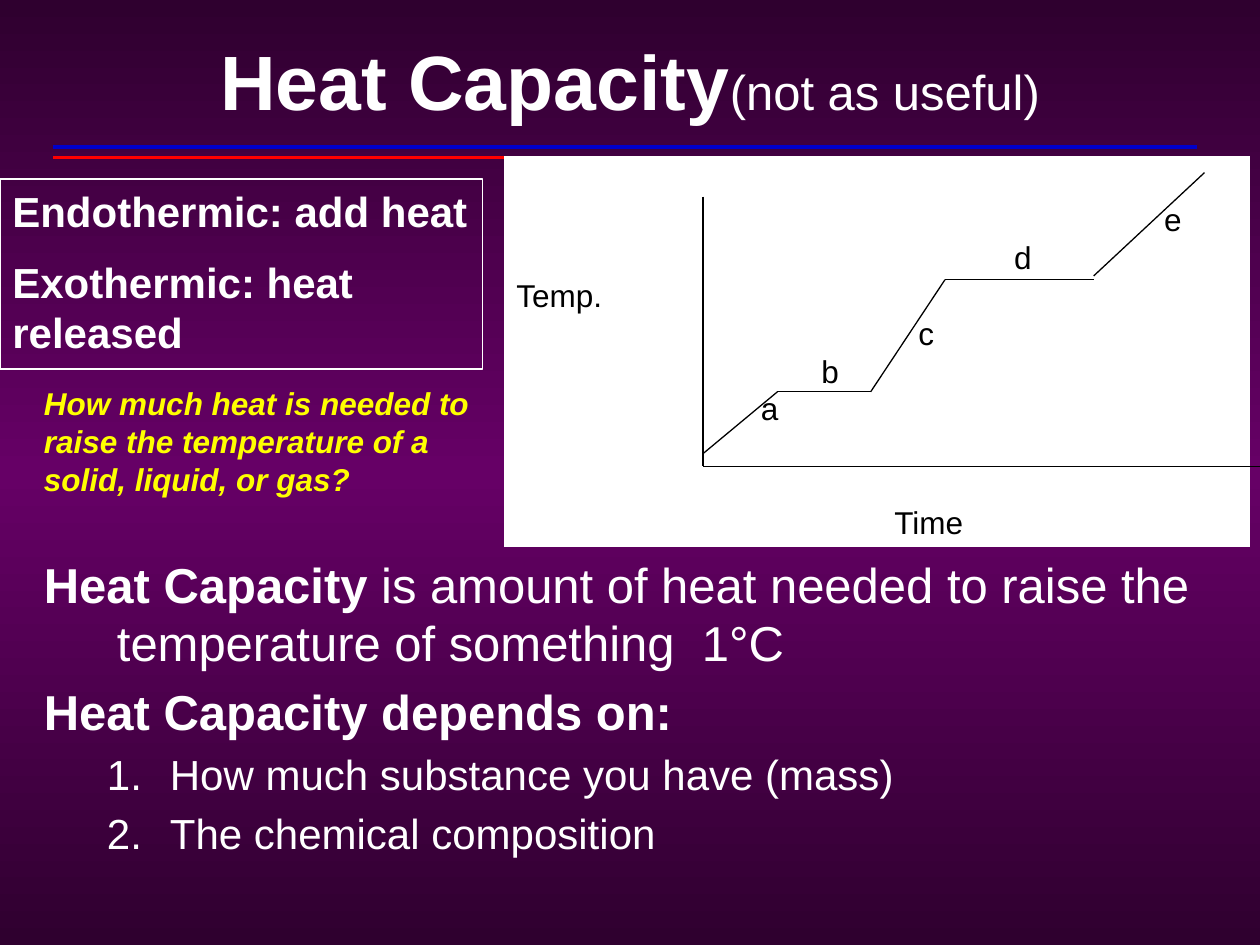
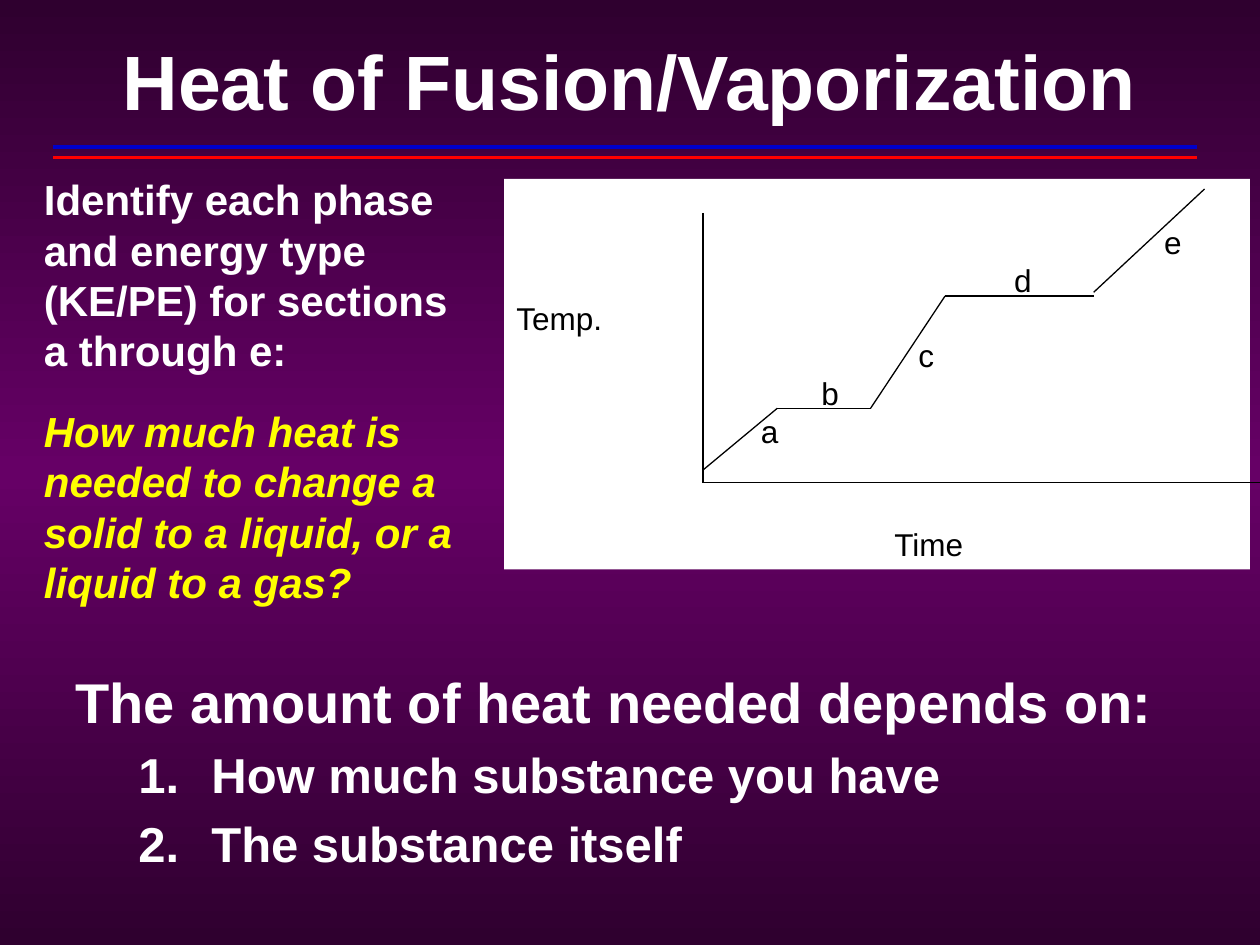
"""Build two slides about heat capacity and the heat of phase changes."""
from copy import deepcopy
from dataclasses import dataclass

from lxml.etree import SubElement
from pptx import Presentation
from pptx.dml.color import RGBColor
from pptx.enum.shapes import MSO_CONNECTOR, MSO_SHAPE
from pptx.enum.text import MSO_ANCHOR, MSO_AUTO_SIZE, PP_ALIGN
from pptx.oxml.ns import qn
from pptx.util import Inches, Pt


@dataclass(frozen=True)
class Theme:
    font: str = "Arial"
    edge: str = "2F002F"
    middle: str = "660066"
    text: str = "FFFFFF"
    question: str = "FFFF00"
    panel: str = "FFFFFF"
    ink: str = "000000"
    red_rule: str = "FF0000"
    blue_rule: str = "0000CC"
    title_size: int = 44
    heading_size: int = 32
    body_size: int = 28
    note_size: int = 24
    label_size: int = 18
    line_height: float = 1.2
    rule_width: float = 2.25
    thin_width: float = 0.75


@dataclass(frozen=True)
class Line:
    pieces: tuple
    size: int
    color: str
    gap: float = 0
    indent: float = 0
    hanging: float = 0
    italic: bool = False
    numbered: bool = False


THEME = Theme()
PANEL_LEFT, PANEL_WIDTH, PANEL_HEIGHT = 4, 5.92, 3.1
AXIS_LEFT, AXIS_RIGHT, AXIS_HEIGHT = 5.58, 10, 2.14
HEATING_CURVE = [(5.58, 2.04), (6.17, 1.55), (6.91, 1.55), (7.5, 0.66), (8.68, 0.66)]
GAS_SECTION = [(8.68, 0.63), (9.56, -0.19)]
CURVE_LABELS = [("e", 5.14), ("d", 3.95), ("Temp.", 0), ("c", 3.19),
                ("b", 2.42), ("a", 1.94), ("Time", 3)]


def rgb(color):
    return RGBColor.from_string(color)


def plain(text, size, bold=True, color=THEME.text, **options):
    return Line(((text, bold),), size, color, **options)


def body_line(text, size, bold=True, **options):
    return plain(text, size, bold, gap=0.2 * size, **options)


def numbered(texts, size, bold, indent, hanging):
    return [body_line(text, size, bold, indent=indent, hanging=hanging, numbered=True)
            for text in texts]


class SlideBuilder:
    def __init__(self, presentation, theme):
        self.presentation = presentation
        self.theme = theme
        self.slide = None

    def paint_background(self):
        master = self.presentation.slide_master
        fill = master.background.fill
        fill.gradient()
        fill.gradient_angle = 90
        stop_list = master.element.find(".//" + qn("a:gsLst"))
        stop_list.append(deepcopy(stop_list[0]))
        colors = (self.theme.edge, self.theme.middle, self.theme.edge)
        for index, (stop, color) in enumerate(zip(fill.gradient_stops, colors)):
            stop.position = index / 2
            stop.color.rgb = rgb(color)

    def start(self, title, remark=""):
        layout = self.presentation.slide_layouts.get_by_name("Title Only")
        self.slide = self.presentation.slides.add_slide(layout)
        self.connect((0.42, 1.25), (9.5, 1.25), self.theme.red_rule, self.theme.rule_width)
        self.connect((0.42, 1.17), (9.5, 1.17), self.theme.blue_rule, self.theme.rule_width)
        shape = self.slide.shapes.title
        shape.left, shape.top = Inches(0.5), Inches(0.17)
        shape.width, shape.height = Inches(9), Inches(0.92)
        text_frame = shape.text_frame
        text_frame.auto_size = MSO_AUTO_SIZE.NONE
        text_frame.vertical_anchor = MSO_ANCHOR.MIDDLE
        paragraph = text_frame.paragraphs[0]
        paragraph.alignment = PP_ALIGN.CENTER
        self.add_run(paragraph, title, self.theme.title_size, self.theme.text, True)
        if remark:
            self.add_run(paragraph, remark, self.theme.body_size, self.theme.text, False)

    def add_run(self, paragraph, text, size, color, bold, italic=False):
        run = paragraph.add_run()
        run.text = text
        run.font.name = self.theme.font
        run.font.size = Pt(size)
        run.font.bold = bold
        run.font.italic = italic
        run.font.color.rgb = rgb(color)

    def fill_text(self, text_frame, lines):
        text_frame.word_wrap = True
        text_frame.vertical_anchor = MSO_ANCHOR.TOP
        for index, line in enumerate(lines):
            paragraph = text_frame.add_paragraph() if index else text_frame.paragraphs[0]
            paragraph.alignment = PP_ALIGN.LEFT
            paragraph.line_spacing = Pt(line.size * self.theme.line_height)
            paragraph.space_before = Pt(line.gap if index else 0)
            properties = paragraph._p.get_or_add_pPr()
            properties.set("marL", str(Inches(line.indent)))
            properties.set("indent", str(Inches(-line.hanging)))
            if line.numbered:
                SubElement(properties, qn("a:buFont"), typeface=self.theme.font)
                SubElement(properties, qn("a:buAutoNum"), type="arabicPeriod")
            for text, bold in line.pieces:
                self.add_run(paragraph, text, line.size, line.color, bold, line.italic)

    def text(self, left, top, width, height, lines):
        shape = self.slide.shapes.add_textbox(
            Inches(left), Inches(top), Inches(width), Inches(height))
        self.fill_text(shape.text_frame, lines)

    def rectangle(self, left, top, width, height, lines, fill=None, outline=None):
        shape = self.slide.shapes.add_shape(
            MSO_SHAPE.RECTANGLE, Inches(left), Inches(top), Inches(width), Inches(height))
        shape.shadow.inherit = False
        if fill:
            shape.fill.solid()
            shape.fill.fore_color.rgb = rgb(fill)
        else:
            shape.fill.background()
        if outline:
            shape.line.color.rgb = rgb(outline)
            shape.line.width = Pt(self.theme.thin_width)
        else:
            shape.line.fill.background()
        self.fill_text(shape.text_frame, lines)
        return shape

    def connect(self, start, end, color, width):
        connector = self.slide.shapes.add_connector(
            MSO_CONNECTOR.STRAIGHT, *(Inches(value) for value in (*start, *end)))
        connector.line.color.rgb = rgb(color)
        connector.line.width = Pt(width)
        SubElement(connector._element.spPr, qn("a:effectLst"))

    def heating_curve(self, panel_top, axis_top):
        size = self.theme.label_size
        line_height = size * self.theme.line_height
        labels = [plain(text, size, False, self.theme.ink, indent=indent,
                        gap=2 * line_height if text == "Time" else 0)
                  for text, indent in CURVE_LABELS]
        panel = self.rectangle(PANEL_LEFT, panel_top, PANEL_WIDTH, PANEL_HEIGHT,
                               labels, fill=self.theme.panel)
        panel.text_frame.margin_top = Inches(0.35)
        axes = [(AXIS_LEFT, 0), (AXIS_LEFT, AXIS_HEIGHT), (AXIS_RIGHT, AXIS_HEIGHT)]
        for points in (axes, HEATING_CURVE, GAS_SECTION):
            for (x1, y1), (x2, y2) in zip(points, points[1:]):
                self.connect((x1, axis_top + y1), (x2, axis_top + y2),
                             self.theme.ink, self.theme.thin_width)


def build_heat_capacity(builder):
    theme = builder.theme
    builder.start("Heat Capacity", "(not as useful)")
    builder.heating_curve(panel_top=1.24, axis_top=1.56)
    definition = Line(
        (("Heat Capacity ", True),
         ("is amount of heat needed to raise the temperature of something  1°C", False)),
        theme.body_size, theme.text, indent=0.58, hanging=0.58)
    builder.text(0.25, 4.35, 9.58, 2.5, [
        definition,
        body_line("Heat Capacity depends on:", theme.body_size, indent=0.58, hanging=0.58),
        *numbered(["How much substance you have (mass)", "The chemical composition"],
                  theme.note_size, False, 1, 0.5)])
    builder.text(0.25, 3, 3.58, 1.01, [
        plain("How much heat is needed to raise the temperature of a solid, liquid, or gas?",
              theme.label_size, color=theme.question, italic=True)])
    builder.rectangle(0, 1.42, 3.83, 1.51, [
        plain(text, theme.note_size, gap=theme.note_size / 2)
        for text in ("Endothermic: add heat", "Exothermic: heat released")],
        outline=theme.text)


def build_phase_changes(builder):
    theme = builder.theme
    builder.start("Heat of Fusion/Vaporization")
    builder.text(0.5, 5.25, 9, 1.92, [
        body_line("The amount of heat needed depends on:", theme.heading_size,
                  indent=0.67, hanging=0.67),
        *numbered(["How much substance you have", "The substance itself"],
                  theme.body_size, True, 1.08, 0.58)])
    builder.text(0.25, 1.33, 3.58, 1.7, [
        plain("Identify each phase and energy type (KE/PE) for sections a through e:",
              theme.note_size)])
    builder.text(0.25, 3.17, 3.58, 1.7, [
        plain("How much heat is needed to change a solid to a liquid, or a liquid to a gas?",
              theme.note_size, color=theme.question, italic=True)])
    builder.heating_curve(panel_top=1.42, axis_top=1.69)


def main():
    presentation = Presentation()
    presentation.slide_width, presentation.slide_height = Inches(10), Inches(7.5)
    builder = SlideBuilder(presentation, THEME)
    builder.paint_background()
    build_heat_capacity(builder)
    build_phase_changes(builder)
    presentation.save("out.pptx")


if __name__ == "__main__":
    main()
